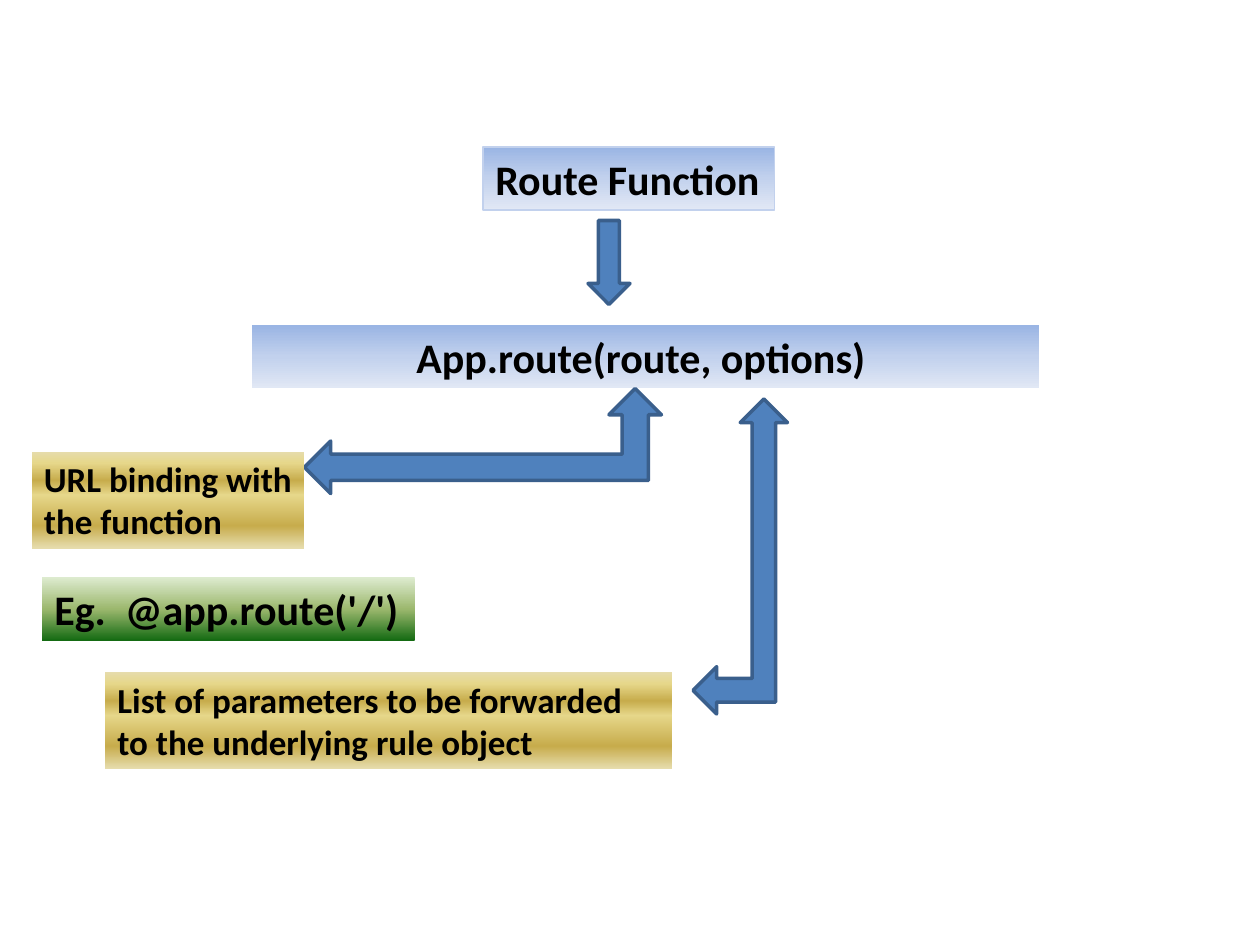
from dataclasses import dataclass

from lxml import etree
from pptx import Presentation
from pptx import util as u
from pptx.dml.color import RGBColor
from pptx.enum import shapes, text
from pptx.oxml.ns import qn

PX = 7620  # 120 px to the inch

BLUE = [(0, "9AB5E4"), (50, "C2D1ED"), (100, "E1E8F5")]
GOLD = [(0, "E6DCAC"), (12, "E6D78A"), (30, "C7AC4C"),
        (45, "E6D78A"), (77, "C7AC4C"), (100, "E6DCAC")]
GREEN = [(0, "DDEBCF"), (50, "9CB86E"), (100, "156B13")]

DOWN = shapes.MSO_SHAPE.DOWN_ARROW
BEND = shapes.MSO_SHAPE.LEFT_UP_ARROW


@dataclass
class Label:
    words: str
    box: tuple[int, int, int, int]
    stops: list[tuple[int, str]]
    size: int = 24
    wrap: bool = True
    center: bool = False
    edge: str = ""


@dataclass
class Arrow:
    kind: shapes.MSO_SHAPE
    box: tuple[int, int, int, int]


ITEMS = [
    Label("Route Function", (460, 140, 278, 60), BLUE, wrap=False, edge="C2D1ED"),
    Arrow(DOWN, (560, 210, 40, 80)),
    Label("App.route(route, options) ", (240, 310, 750, 60), BLUE, center=True),
    Arrow(BEND, (290, 370, 340, 100)),
    Label("URL binding with the function", (30, 430, 260, 92), GOLD, size=20),
    Arrow(BEND, (660, 380, 90, 300)),
    Label("List of parameters to be forwarded  to the underlying rule object",
          (100, 640, 540, 92), GOLD, size=20),
    Label("Eg.  @app.route('/')", (40, 550, 355, 60), GREEN, wrap=False),
]


def color(code: str) -> RGBColor:
    return RGBColor.from_string(code)


def scale(box: tuple[int, int, int, int]) -> list[int]:
    return [n * PX for n in box]


def blend(shape, stops: list[tuple[int, str]]) -> None:
    """Fill the shape from top to bottom with stops given in percent."""
    shape.fill.gradient()
    shape.fill.gradient_angle = 270
    group = next(shape.element.iter(qn("a:gsLst")))
    for old in list(group):
        group.remove(old)
    for place, code in stops:
        stop = etree.SubElement(group, qn("a:gs"), pos=str(place * 1000))
        etree.SubElement(stop, qn("a:srgbClr"), val=code)


def draw_label(slide, item: Label) -> None:
    shape = slide.shapes.add_textbox(*scale(item.box))
    blend(shape, item.stops)
    if item.edge:
        shape.line.color.rgb = color(item.edge)
        shape.line.width = u.Pt(0.75)
    frame = shape.text_frame
    frame.text = item.words
    frame.word_wrap = item.wrap
    frame.auto_size = text.MSO_AUTO_SIZE.SHAPE_TO_FIT_TEXT
    para = frame.paragraphs[0]
    para.alignment = text.PP_ALIGN.CENTER if item.center else text.PP_ALIGN.LEFT
    font = para.runs[0].font
    font.name = "Calibri"
    font.size = u.Pt(item.size)
    font.bold = True
    font.color.rgb = color("000000")


def draw_arrow(slide, item: Arrow) -> None:
    shape = slide.shapes.add_shape(item.kind, *scale(item.box))
    shape.shadow.inherit = False
    shape.fill.solid()
    shape.fill.fore_color.rgb = color("4F81BD")
    shape.line.color.rgb = color("3A5F8C")
    shape.line.width = u.Pt(2)


def main() -> None:
    deck = Presentation()
    deck.slide_width = 1200 * PX
    deck.slide_height = 900 * PX
    slide = deck.slides.add_slide(deck.slide_layouts.get_by_name("Blank"))
    for item in ITEMS:
        if isinstance(item, Label):
            draw_label(slide, item)
        else:
            draw_arrow(slide, item)
    deck.save("out.pptx")


if __name__ == "__main__":
    main()
